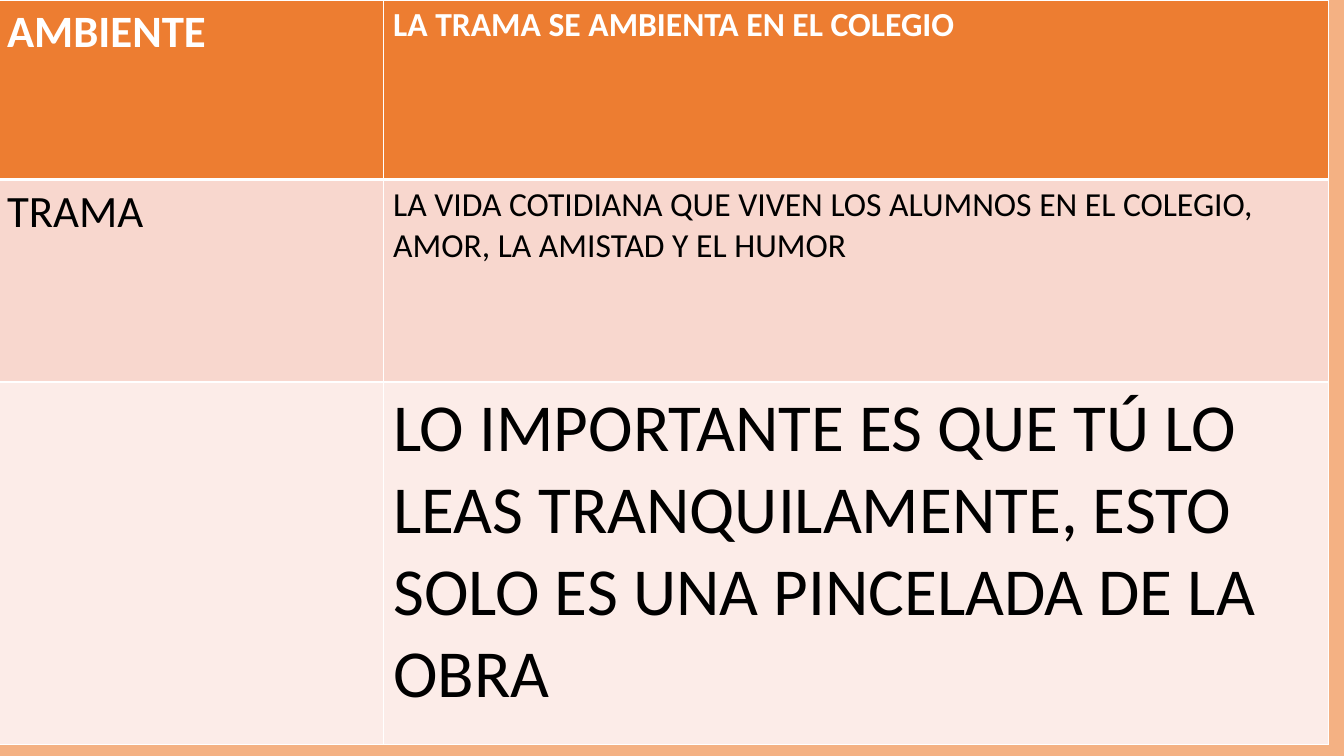
from lxml import etree
from pptx import Presentation
from pptx import util as u
from pptx.dml.color import RGBColor
from pptx.oxml.ns import qn

BACKGROUND = "F4B183"
BORDER = "FFFFFF"
LEFT, TOP = -0.03, 0
COL_WIDTHS = [3.83, 9.38]
ROWS = [
    dict(height=1.78, fill="ED7D31", color="FFFFFF", bold=True, bottom=3,
         cells=[("AMBIENTE", 32), ("LA TRAMA SE AMBIENTA EN EL COLEGIO", 24)]),
    dict(height=2.01, fill="F8D7CE", color="000000", bold=False, bottom=1,
         cells=[("TRAMA", 32),
                ("LA VIDA COTIDIANA QUE VIVEN LOS ALUMNOS EN EL COLEGIO, "
                 "AMOR, LA AMISTAD Y EL HUMOR", 24)]),
    dict(height=3.6, fill="FCECE8", color="000000", bold=False, bottom=1,
         cells=[("", 32),
                ("LO IMPORTANTE ES QUE TÚ LO LEAS TRANQUILAMENTE, "
                 "ESTO SOLO ES UNA PINCELADA DE LA OBRA", 48)]),
]


def rgb(value):
    return RGBColor.from_string(value)


def set_fill(target, color):
    target.fill.solid()
    target.fill.fore_color.rgb = rgb(color)


def write(tf, content, size, color, bold=False, font="Calibri"):
    p = tf.paragraphs[0]
    p.font.size = u.Pt(size)
    if content:
        r = p.add_run()
        r.text = content
        r.font.name = font
        r.font.size = u.Pt(size)
        r.font.bold = bold
        r.font.color.rgb = rgb(color)


def set_borders(cell, top, bottom):
    props = cell._tc.get_or_add_tcPr()
    widths = {"a:lnL": 1, "a:lnR": 1, "a:lnT": top, "a:lnB": bottom}
    for i, (tag, width) in enumerate(widths.items()):
        line = etree.Element(qn(tag), w=str(u.Pt(width)))
        solid = etree.SubElement(line, qn("a:solidFill"))
        etree.SubElement(solid, qn("a:srgbClr"), val=BORDER)
        props.insert(i, line)


def main():
    prs = Presentation()
    prs.slide_width, prs.slide_height = u.Inches(13.33), u.Inches(7.5)
    s = prs.slides.add_slide(prs.slide_layouts[6])
    set_fill(s.background, BACKGROUND)

    total_height = sum(row["height"] for row in ROWS)
    table = s.shapes.add_table(
        len(ROWS), len(COL_WIDTHS), u.Inches(LEFT), u.Inches(TOP),
        u.Inches(sum(COL_WIDTHS)), u.Inches(total_height)).table
    for column, width in zip(table.columns, COL_WIDTHS):
        column.width = u.Inches(width)

    top = 1
    for i, row in enumerate(ROWS):
        table.rows[i].height = u.Inches(row["height"])
        for j, (content, size) in enumerate(row["cells"]):
            cell = table.cell(i, j)
            set_fill(cell, row["fill"])
            set_borders(cell, top, row["bottom"])
            write(cell.text_frame, content, size, row["color"], bold=row["bold"])
        top = row["bottom"]

    prs.save("out.pptx")


if __name__ == "__main__":
    main()
